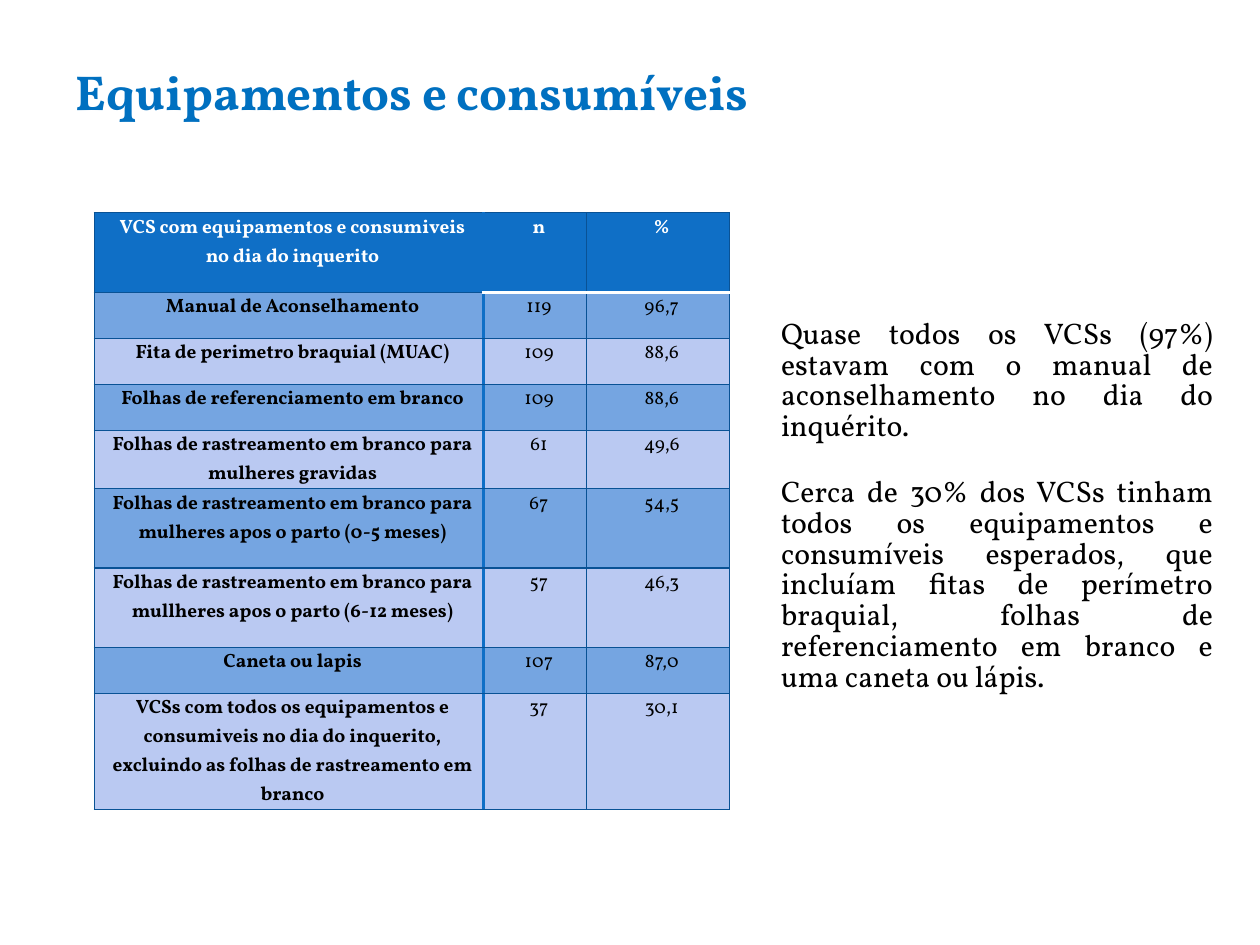
import pptx
import pptx.util
import pptx.dml.color
import pptx.enum.text
import pptx.oxml
import pptx.oxml.ns
from pptx.util import Cm, Pt

ALIGN = pptx.enum.text.PP_ALIGN
FONT = "Vollkorn"
COLORS = {"title": "0070C0", "text": "000000", "white": "FFFFFF", "header": "0F6FC6",
          "dark row": "75A5E1", "light row": "BAC9F2", "grid": "095295"}

TITLE = "Equipamentos e consumíveis"
HEADER = ("VCS com equipamentos e consumiveis no dia do inquerito", "n", "%")
ROWS = [
    ("Manual de Aconselhamento", "119", "96,7"),
    ("Fita de perimetro braquial (MUAC)", "109", "88,6"),
    ("Folhas de referenciamento em branco", "109", "88,6"),
    ("Folhas de rastreamento em branco para mulheres gravidas", "61", "49,6"),
    ("Folhas de rastreamento em branco para mulheres apos o parto (0-5 meses)", "67", "54,5"),
    ("Folhas de rastreamento em branco para mullheres apos o parto (6-12 meses)", "57", "46,3"),
    ("Caneta ou lapis", "107", "87,0"),
    ("VCSs com todos os equipamentos e consumiveis no dia do inquerito, "
     "excluindo as folhas de rastreamento em branco", "37", "30,1"),
]
COMMENTS = [
    "Quase todos os VCSs (97%) estavam com o manual de aconselhamento no dia do inquérito.",
    "Cerca de 30% dos VCSs tinham todos os equipamentos e consumíveis esperados, que incluíam "
    "fitas de perímetro braquial, folhas de referenciamento em branco e uma caneta ou lápis.",
]
COLUMN_WIDTHS = (7.85, 2.08, 2.87)
ROW_HEIGHTS = (1.6, 0.93, 0.93, 0.93, 1.09, 1.6, 1.6, 0.93, 1.63)


def rgb(name):
    return pptx.dml.color.RGBColor.from_string(COLORS[name])


def write(para, text, size, color="text", bold=False, align=ALIGN.LEFT,
          spacing=1.0, before=0, indent=0):
    properties = para._p.get_or_add_pPr()
    properties.set("marL", str(Cm(indent)))
    properties.set("indent", "0")
    properties.append(pptx.oxml.parse_xml(f"<a:buNone {pptx.oxml.ns.nsdecls('a')}/>"))
    para.alignment = align
    para.line_spacing = spacing
    para.space_before = Pt(before)
    span = para.add_run()
    span.text = text
    span.font.name = FONT
    span.font.size = Pt(size)
    span.font.bold = bold
    span.font.color.rgb = rgb(color)


def set_borders(cell, **sides):
    """Give each side as (colour name, points); the order is left, right, top, bottom."""
    properties = cell._tc.get_or_add_tcPr()
    for position, tag in enumerate(("lnL", "lnR", "lnT", "lnB")):
        color, width = sides[tag]
        properties.insert(position, pptx.oxml.parse_xml(
            f'<a:{tag} {pptx.oxml.ns.nsdecls("a")} w="{Pt(width)}"><a:solidFill>'
            f'<a:srgbClr val="{COLORS[color]}"/></a:solidFill></a:{tag}>'))


def place(shape, left, top, width, height):
    shape.left, shape.top, shape.width, shape.height = map(Cm, (left, top, width, height))
    frame = shape.text_frame
    frame.word_wrap = True
    frame.auto_size = pptx.enum.text.MSO_AUTO_SIZE.NONE
    frame.vertical_anchor = pptx.enum.text.MSO_ANCHOR.TOP
    return frame


def add_equipment_table(page):
    records = [HEADER] + ROWS
    table = page.shapes.add_table(len(records), len(HEADER), Cm(1.9), Cm(4.29),
                                  Cm(sum(COLUMN_WIDTHS)), Cm(sum(ROW_HEIGHTS))).table
    for column, width in zip(table.columns, COLUMN_WIDTHS):
        column.width = Cm(width)
    for row, height in zip(table.rows, ROW_HEIGHTS):
        row.height = Cm(height)

    thin, thick, white = ("grid", 0.75), ("header", 2), ("white", 2)
    for r, record in enumerate(records):
        fill = "header" if r == 0 else "dark row" if r % 2 else "light row"
        for c, text in enumerate(record):
            cell = table.cell(r, c)
            cell.margin_left = cell.margin_right = Cm(0.18)
            cell.margin_top = cell.margin_bottom = 0
            cell.fill.solid()
            cell.fill.fore_color.rgb = rgb(fill)
            set_borders(cell,
                        lnL=thick if c == 1 else thin,
                        lnR=thick if c == 0 else thin,
                        lnT=white if r == 1 and c else thin,
                        lnB=white if r == 0 and c else thin)
            write(cell.text_frame.paragraphs[0], text, 11, bold=r == 0 or c == 0,
                  color="text" if r else "white", align=ALIGN.CENTER,
                  spacing=1.07, indent=0.15)


def main():
    deck = pptx.Presentation()
    deck.slide_width, deck.slide_height = Cm(25.4), Cm(19.05)
    page = deck.slides.add_slide(deck.slide_layouts[1])
    title, body = page.placeholders

    frame = place(title, 1.27, 1.12, 22.86, 3.18)
    write(frame.paragraphs[0], TITLE, 28, color="title", bold=True)

    add_equipment_table(page)

    frame = place(body, 15.49, 6.32, 9.22, 8.97)
    for number, text in enumerate(COMMENTS):
        para = frame.add_paragraph() if number else frame.paragraphs[0]
        write(para, text, 17, align=ALIGN.JUSTIFY, spacing=0.86, before=20.4 * number)

    deck.save("out.pptx")


if __name__ == "__main__":
    main()
